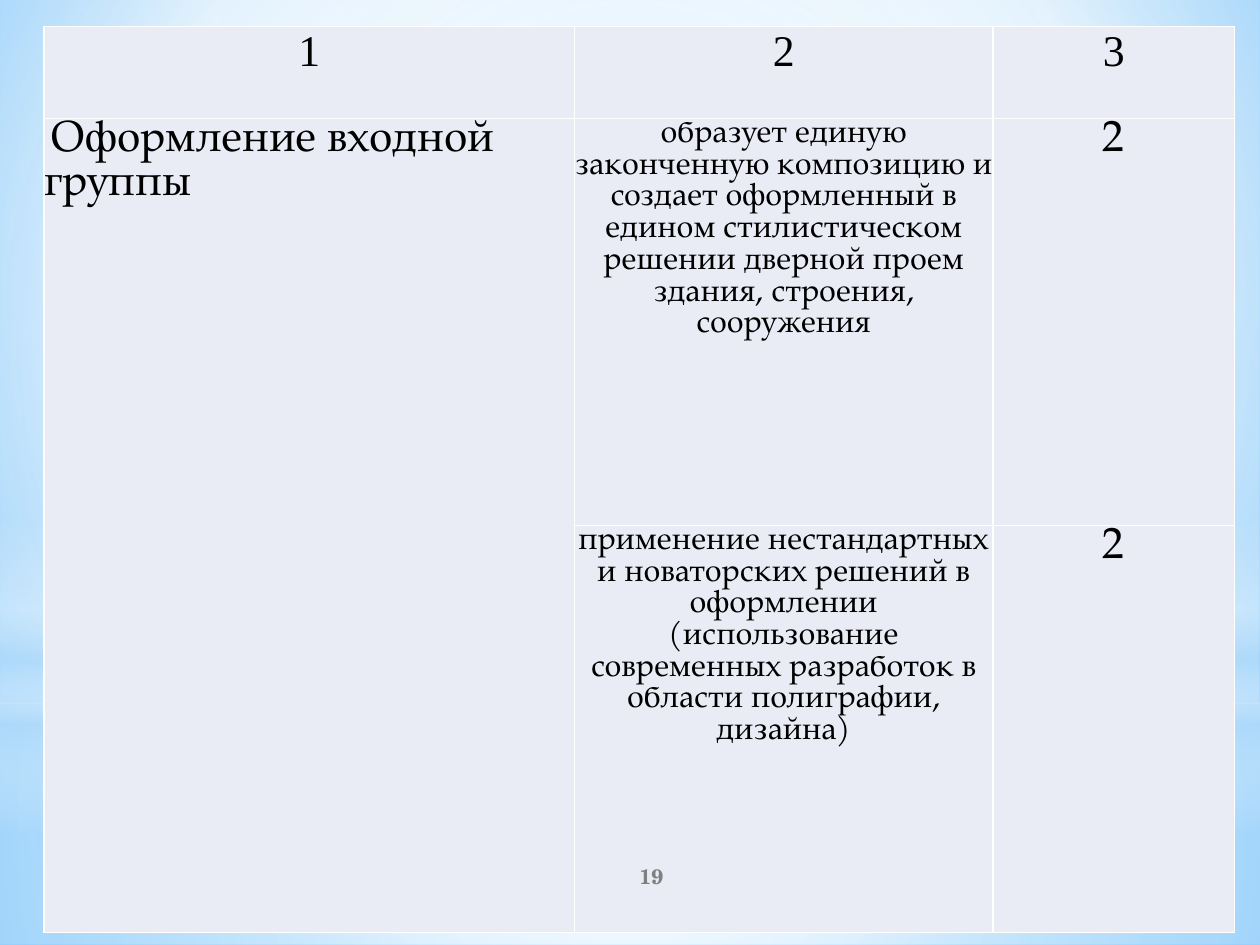
from pptx import Presentation
from pptx.dml.color import RGBColor
from pptx.enum.shapes import MSO_SHAPE
from pptx.enum.text import MSO_ANCHOR, PP_ALIGN
from pptx.oxml import parse_xml
from pptx.oxml.ns import nsdecls, qn
from pptx.util import Inches, Pt

RECT, OVAL = MSO_SHAPE.RECTANGLE, MSO_SHAPE.OVAL
LEFT, CENTER = PP_ALIGN.LEFT, PP_ALIGN.CENTER
MIDDLE = MSO_ANCHOR.MIDDLE
SERIF, BODY, NUMBER = "Times New Roman", "TeX Gyre Pagella", "TeX Gyre Schola"
COLORS = {
    "white": "FFFFFF", "pale": "B4DCFA", "sky": "9ED5FF", "blue": "5BB9FF",
    "cell": "E9EBF5", "black": "000000", "gray": "808080",
}
MID = (50, 50, 50, 50)


class Deck:
    def __init__(self, width, height):
        self.file = Presentation()
        self.file.slide_width = Inches(width)
        self.file.slide_height = Inches(height)
        self.slide = self.file.slides.add_slide(self.file.slide_layouts[6])

    def blend(self, fill, root, stops, focus=None):
        fill.gradient()
        old = next(root.iter(qn("a:gradFill")))
        marks = "".join(
            f'<a:gs pos="{pos * 1000}"><a:srgbClr val="{COLORS[name]}">'
            f'<a:alpha val="{alpha * 1000}"/></a:srgbClr></a:gs>'
            for pos, name, alpha in stops)
        if focus:
            sides = " ".join(f'{side}="{part * 1000}"' for side, part in zip("ltrb", focus))
            shade = f'<a:path path="circle"><a:fillToRect {sides}/></a:path>'
        else:
            shade = '<a:lin ang="5400000" scaled="0"/>'
        new = parse_xml(f'<a:gradFill {nsdecls("a")} rotWithShape="1">'
                        f'<a:gsLst>{marks}</a:gsLst>{shade}</a:gradFill>')
        old.getparent().replace(old, new)

    def back(self, stops, focus):
        fill = self.slide.background.fill
        self.blend(fill, self.slide.element, stops, focus)

    def glow(self, kind, top, height, stops, focus=None):
        shape = self.slide.shapes.add_shape(
            kind, 0, Inches(top), self.file.slide_width, Inches(height))
        shape.shadow.inherit = False
        shape.line.fill.background()
        self.blend(shape.fill, shape.element.spPr, stops, focus)

    def text(self, frame, words, size, face, color="black", align=CENTER, bold=False):
        frame.word_wrap = True
        line = frame.paragraphs[0]
        line.text = words
        line.alignment = align
        line.font.size = Pt(size)
        line.font.name = face
        line.font.bold = bold
        line.font.color.rgb = RGBColor.from_string(COLORS[color])
        return line

    def label(self, words, left, top, width, height):
        box = self.slide.shapes.add_textbox(
            Inches(left), Inches(top), Inches(width), Inches(height))
        box.text_frame.vertical_anchor = MIDDLE
        self.text(box.text_frame, words, 12, NUMBER, "gray", bold=True)

    def grid(self, left, top, cols, rows):
        table = self.slide.shapes.add_table(
            len(rows), len(cols), Inches(left), Inches(top),
            Inches(sum(cols)), Inches(sum(rows))).table
        table.first_row = table.horz_banding = False
        for col, width in zip(table.columns, cols):
            col.width = Inches(width)
        for row, height in zip(table.rows, rows):
            row.height = Inches(height)
        for cell in table.iter_cells():
            self.style(cell)
        return table

    def style(self, cell):
        cell.margin_left = cell.margin_right = 0
        cell.margin_top = cell.margin_bottom = Inches(0.01)
        cell.fill.solid()
        cell.fill.fore_color.rgb = RGBColor.from_string(COLORS["cell"])
        props = cell._tc.get_or_add_tcPr()
        for spot, side in enumerate("LRTB"):
            props.insert(spot, parse_xml(
                f'<a:ln{side} {nsdecls("a")} w="{Pt(1)}"><a:solidFill>'
                f'<a:srgbClr val="{COLORS["white"]}"/></a:solidFill></a:ln{side}>'))


def main():
    deck = Deck(10, 7.5)
    deck.back([(0, "sky", 100), (60, "white", 100), (100, "blue", 100)], (20, 10, 20, 60))
    deck.glow(RECT, 5.58, 1.92,
              [(0, "white", 91), (37, "white", 76), (100, "pale", 79)], MID)
    deck.glow(RECT, 0, 5.58,
              [(0, "white", 89), (48, "white", 62), (100, "pale", 79)], MID)
    deck.glow(RECT, 4.12, 2.5,
              [(0, "white", 0), (29, "white", 30), (45, "pale", 40),
               (55, "white", 26), (65, "pale", 60), (100, "white", 0)])
    deck.glow(OVAL, 1.75, 5.58, [(0, "white", 100), (56, "white", 0)], MID)

    table = deck.grid(0.35, 0.21, [4.21, 3.32, 1.92], [0.73, 3.23, 3.23])
    for col, head in enumerate("123"):
        deck.text(table.cell(0, col).text_frame, head, 25, SERIF)
    group = table.cell(1, 0)
    group.merge(table.cell(2, 0))
    title = deck.text(group.text_frame, "Оформление входной группы", 25, BODY, align=LEFT)
    props = title._p.get_or_add_pPr()
    props.set("marL", "0")
    props.set("indent", str(Inches(0.05)))
    rules = [
        ("образует единую законченную композицию и создает оформленный в едином "
         "стилистическом решении дверной проем здания, строения, сооружения", "2"),
        ("применение нестандартных и новаторских решений в оформлении "
         "(использование современных разработок в области полиграфии, дизайна)", "2"),
    ]
    for row, (rule, score) in enumerate(rules, 1):
        deck.text(table.cell(row, 1).text_frame, rule, 18, BODY)
        deck.text(table.cell(row, 2).text_frame, score, 25, BODY)

    deck.label("19", 4.17, 6.75, 2, 0.4)
    deck.file.save("out.pptx")


if __name__ == "__main__":
    main()
